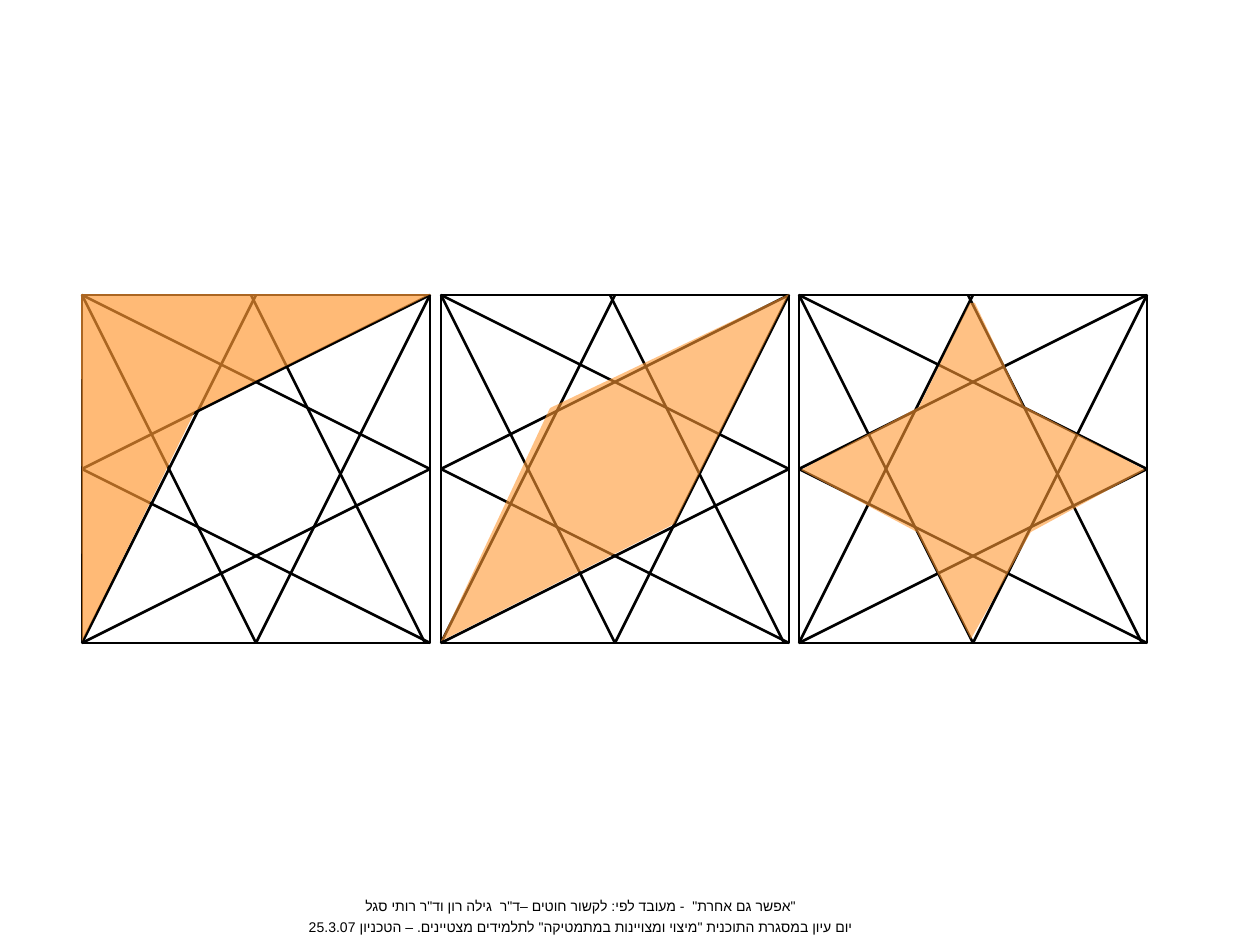
from lxml.etree import SubElement
from pptx import Presentation
from pptx.dml.color import RGBColor
from pptx.enum.shapes import MSO_CONNECTOR, MSO_SHAPE
from pptx.enum.text import PP_ALIGN
from pptx.oxml.ns import qn
from pptx.util import Emu, Pt

PX = 914400 // 126
SIDE, HALF, TOP = 348, 174, 295
INK, ORANGE = "000000", "FF9933"

# Threads inside each square, as offsets from its top left corner
THREADS = [
    ((0, 0), (SIDE, HALF)),
    ((0, HALF), (SIDE, 0)),
    ((0, SIDE), (SIDE, HALF)),
    ((0, HALF), (SIDE, SIDE)),
    ((HALF, SIDE), (SIDE, 0)),
    ((0, 0), (HALF, SIDE)),
    ((HALF, 0), (0, SIDE)),
    ((169, 0), (343, SIDE)),
]
SITES = {(HALF, 0): 0, (0, HALF): 1, (HALF, SIDE): 2, (SIDE, HALF): 3}

# Left edge of the square, opacity in percent, corners of the orange area
STAR = [(120, 112), (2, 175), (118, 237), (172, 344), (232, 237),
        (346, 175), (225, 111), (176, 8), (171, 8)]
KITE = [(0, 346), (109, 113), (348, -1), (233, 229)]
ARROW = [(0, 346), (113, 116), (349, -1), (-1, -1)]
PANELS = [(799, 60, STAR), (441, 60, KITE), (82, 67, ARROW)]

CREDIT = [
    '"אפשר גם אחרת"  - מעובד לפי: לקשור חוטים –ד"ר  גילה רון וד"ר רותי סגל',
    'יום עיון במסגרת התוכנית "מיצוי ומצויינות במתמטיקה" לתלמידים מצטיינים. – הטכניון 25.3.07',
]


def px(*nums):
    return [Emu(n * PX) for n in nums]


def color(code):
    return RGBColor.from_string(code)


def ink(line):
    line.color.rgb = color(INK)
    line.width = Pt(1.5)


def add_square(slide, left):
    group = slide.shapes.add_group_shape().shapes
    square = group.add_shape(MSO_SHAPE.RECTANGLE, *px(left, TOP, SIDE, SIDE))
    square.shadow.inherit = False
    square.fill.background()
    ink(square.line)
    for start, end in THREADS:
        ends = px(left + start[0], TOP + start[1], left + end[0], TOP + end[1])
        thread = group.add_connector(MSO_CONNECTOR.STRAIGHT, *ends)
        ink(thread.line)
        SubElement(thread._element.spPr, qn("a:effectLst"))
        if start in SITES:
            thread.begin_connect(square, SITES[start])
        if end in SITES:
            thread.end_connect(square, SITES[end])


def add_area(slide, left, alpha, corners):
    first, *rest = [(left + x, TOP + y) for x, y in corners]
    pen = slide.shapes.build_freeform(*first, scale=PX)
    pen.add_line_segments(rest, close=True)
    area = pen.convert_to_shape()
    area.shadow.inherit = False
    area.line.fill.background()
    area.fill.solid()
    area.fill.fore_color.rgb = color(ORANGE)
    tint = area._element.spPr.find(qn("a:solidFill"))[0]
    SubElement(tint, qn("a:alpha"), val=str(alpha * 1000))


def add_credit(slide):
    frame = slide.shapes.add_textbox(*px(118, 891, 926, 52)).text_frame
    frame.word_wrap = True
    for i, text in enumerate(CREDIT):
        para = frame.add_paragraph() if i else frame.paragraphs[0]
        para.alignment = PP_ALIGN.CENTER
        para._p.get_or_add_pPr().set("rtl", "1")
        if i:
            para.space_before = Pt(2.4)
        run = para.add_run()
        run.text = text
        run.font.size = Pt(8)
        run.font.name = "Arial"
        run.font.color.rgb = color(INK)
        SubElement(run._r.rPr, qn("a:cs"), typeface="Arial")


def main():
    deck = Presentation()
    deck.slide_width, deck.slide_height = px(1260, 945)
    slide = deck.slides.add_slide(deck.slide_layouts[6])
    for left, alpha, corners in PANELS:
        add_square(slide, left)
        add_area(slide, left, alpha, corners)
    add_credit(slide)
    deck.save("out.pptx")


if __name__ == "__main__":
    main()
